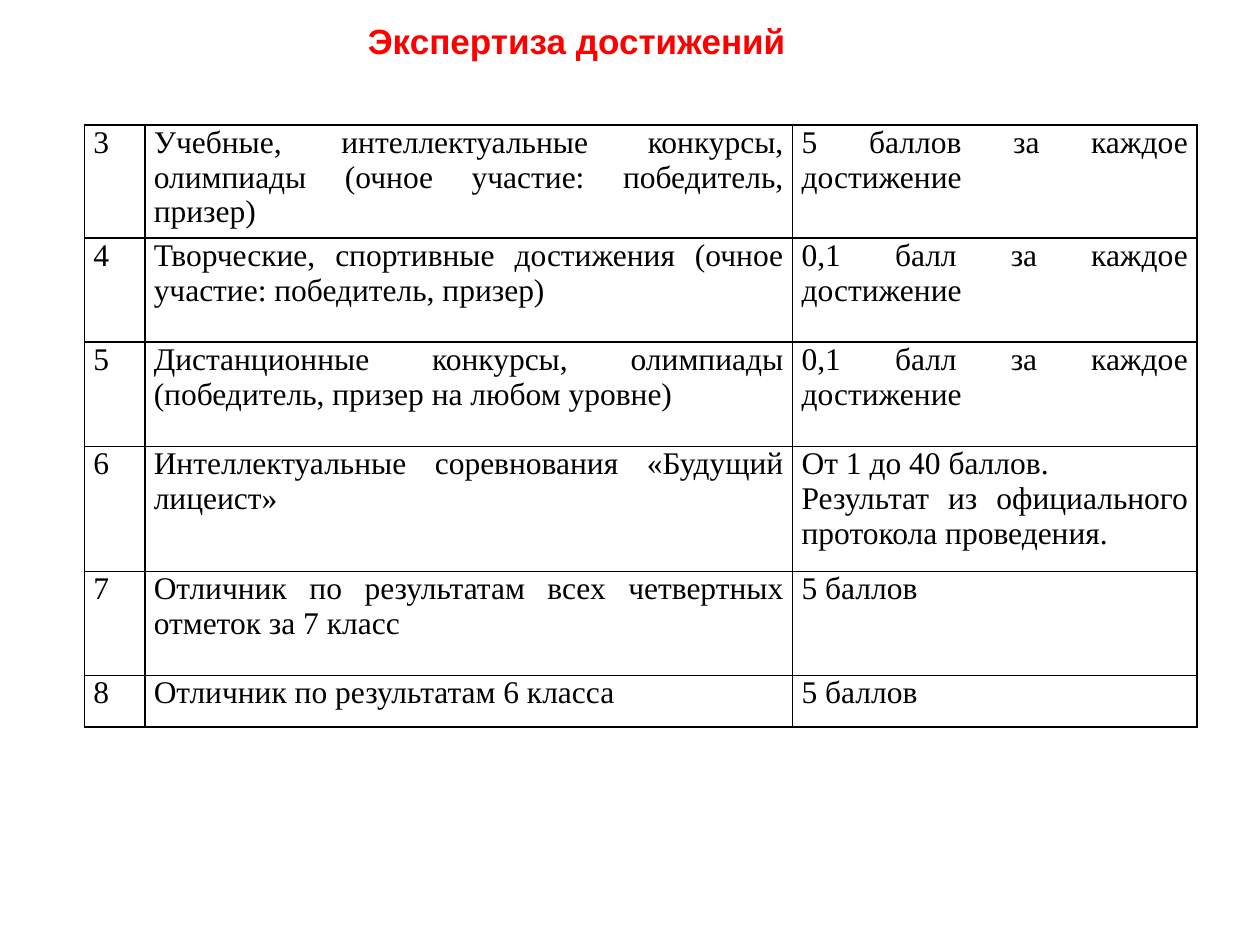
from pptx import Presentation
from pptx.dml.color import RGBColor
from pptx.enum.text import MSO_ANCHOR as Anchor, MSO_AUTO_SIZE as Fit, PP_ALIGN as Align
from pptx.oxml import parse_xml
from pptx.oxml.ns import nsdecls
from pptx.util import Cm, Pt

COLS = [1.22, 13.06, 8.15]
ROWS = [
    (2.28, "3", "Учебные, интеллектуальные конкурсы, олимпиады (очное участие: победитель, призер)",
     "5 баллов за каждое достижение"),
    (2.1, "4", "Творческие, спортивные достижения (очное участие: победитель, призер)",
     "0,1 балл за каждое достижение"),
    (2.1, "5", "Дистанционные конкурсы, олимпиады (победитель, призер на любом уровне)",
     "0,1 балл за каждое достижение"),
    (2.52, "6", "Интеллектуальные соревнования «Будущий лицеист»",
     "От 1 до 40 баллов.\nРезультат из официального протокола проведения."),
    (2.1, "7", "Отличник по результатам всех четвертных отметок за 7 класс", "5 баллов"),
    (1.04, "8", "Отличник по результатам 6 класса", "5 баллов"),
]


def color(code):
    return RGBColor.from_string(code)


def style(par, name, size, code, align, bold=False):
    par.alignment = align
    font = par.font
    font.name, font.size, font.bold = name, Pt(size), bold
    font.color.rgb = color(code)


def add_title(slide, text):
    title = slide.shapes.title
    title.left, title.top, title.width, title.height = Cm(7.16), Cm(0.2), Cm(11.02), Cm(1.96)
    title.fill.solid()
    title.fill.fore_color.rgb = color("FFFFFF")
    frame = title.text_frame
    frame.text = text
    frame.auto_size = Fit.NONE
    frame.vertical_anchor = Anchor.TOP
    frame.margin_top = Cm(0.2)
    style(frame.paragraphs[0], "Arial", 20, "FF0000", Align.LEFT, True)


def add_lines(cell, code, width):
    props = cell._tc.get_or_add_tcPr()
    for spot, side in enumerate("LRTB"):
        props.insert(spot, parse_xml(
            f'<a:ln{side} {nsdecls("a")} w="{Pt(width)}"><a:solidFill>'
            f'<a:srgbClr val="{code}"/></a:solidFill></a:ln{side}>'))


def fill_cell(cell, text):
    cell.text = text
    cell.margin_left = cell.margin_right = Cm(0.18)
    cell.margin_top = cell.margin_bottom = 0
    cell.fill.background()
    add_lines(cell, "000000", 1)
    for par in cell.text_frame.paragraphs:
        style(par, "Times New Roman", 18, "000000", Align.JUSTIFY)


def add_grid(slide):
    high = sum(row[0] for row in ROWS)
    table = slide.shapes.add_table(
        len(ROWS), len(COLS), Cm(1.7), Cm(2.52), Cm(sum(COLS)), Cm(high)).table
    table.first_row = table.horz_banding = False
    for col, width in zip(table.columns, COLS):
        col.width = Cm(width)
    for row, (height, *texts) in zip(table.rows, ROWS):
        row.height = Cm(height)
        for cell, text in zip(row.cells, texts):
            fill_cell(cell, text)


def main():
    deck = Presentation()
    deck.slide_width, deck.slide_height = Cm(25.4), Cm(19.05)
    slide = deck.slides.add_slide(deck.slide_layouts[5])
    add_title(slide, "Экспертиза достижений")
    add_grid(slide)
    deck.save("out.pptx")


if __name__ == "__main__":
    main()
